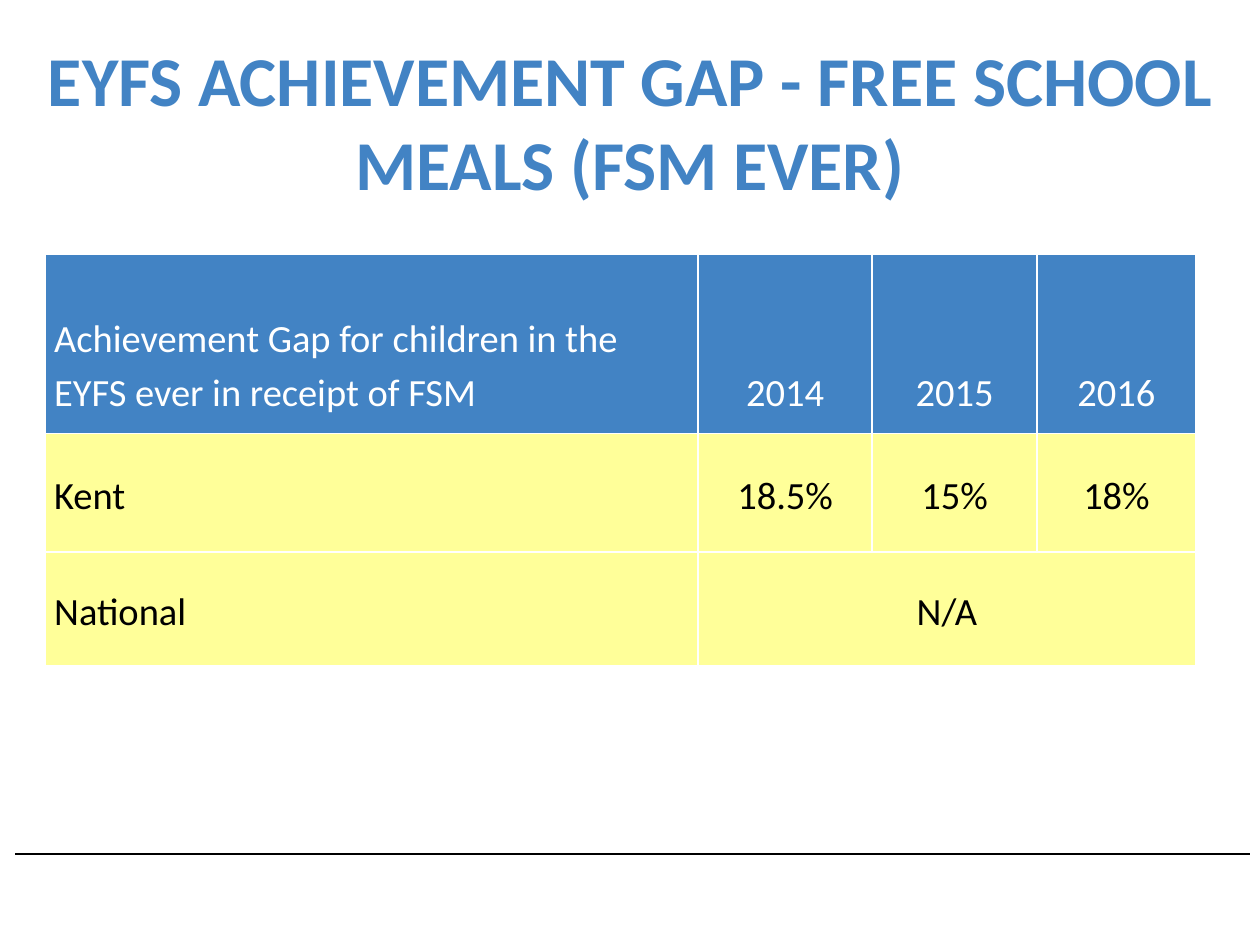
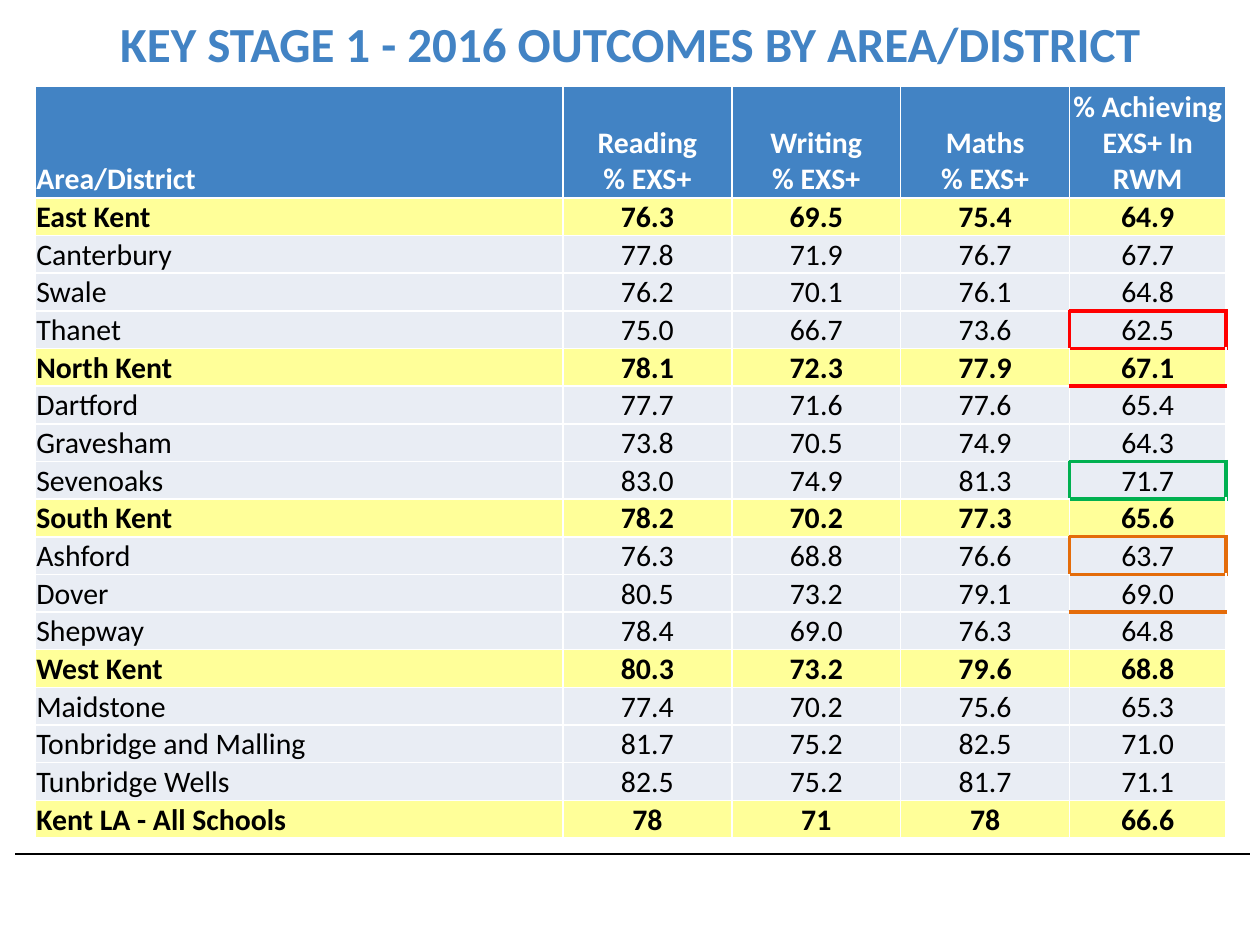
import pptx
import pptx.dml.color
import pptx.enum.shapes
import pptx.enum.text
import pptx.oxml
import pptx.oxml.ns
import pptx.util
from pptx.dml.color import RGBColor
from pptx.enum.text import MSO_ANCHOR, PP_ALIGN
from pptx.util import Pt

FONT = "Calibri"
BLUE = RGBColor(0x42, 0x83, 0xC4)
YELLOW = RGBColor(0xFF, 0xFF, 0x99)
PALE = RGBColor(0xE9, 0xED, 0xF4)
WHITE = RGBColor(0xFF, 0xFF, 0xFF)
BLACK = RGBColor(0, 0, 0)
RED = RGBColor(0xFF, 0, 0)
GREEN = RGBColor(0, 0xB0, 0x50)
ORANGE = RGBColor(0xE4, 0x6C, 0x0A)

TITLE_ONLY = 5
BORDER_SIDES = ["lnL", "lnR", "lnT", "lnB"]

GAP_ROWS = [
    ("Achievement Gap for children in the EYFS ever in receipt of FSM", "2014", "2015", "2016"),
    ("Kent", "18.5%", "15%", "18%"),
    ("National", "N/A", "", ""),
]

OUTCOME_HEADER = ("Area/District", "Reading\n% EXS+", "Writing\n% EXS+", "Maths\n% EXS+",
                  "% Achieving EXS+ In RWM")
OUTCOME_ROWS = [
    ("East Kent", "76.3", "69.5", "75.4", "64.9"),
    ("Canterbury", "77.8", "71.9", "76.7", "67.7"),
    ("Swale", "76.2", "70.1", "76.1", "64.8"),
    ("Thanet", "75.0", "66.7", "73.6", "62.5"),
    ("North Kent", "78.1", "72.3", "77.9", "67.1"),
    ("Dartford", "77.7", "71.6", "77.6", "65.4"),
    ("Gravesham", "73.8", "70.5", "74.9", "64.3"),
    ("Sevenoaks", "83.0", "74.9", "81.3", "71.7"),
    ("South Kent", "78.2", "70.2", "77.3", "65.6"),
    ("Ashford", "76.3", "68.8", "76.6", "63.7"),
    ("Dover", "80.5", "73.2", "79.1", "69.0"),
    ("Shepway", "78.4", "69.0", "76.3", "64.8"),
    ("West Kent", "80.3", "73.2", "79.6", "68.8"),
    ("Maidstone", "77.4", "70.2", "75.6", "65.3"),
    ("Tonbridge and Malling", "81.7", "75.2", "82.5", "71.0"),
    ("Tunbridge Wells", "82.5", "75.2", "81.7", "71.1"),
    ("Kent LA - All Schools", "78", "71", "78", "66.6"),
]
AREAS = {"East Kent", "North Kent", "South Kent", "West Kent", "Kent LA - All Schools"}
HIGHLIGHTS = {"Thanet": RED, "Sevenoaks": GREEN, "Ashford": ORANGE}


def format_runs(text_frame, size, color, bold):
    for paragraph in text_frame.paragraphs:
        for run in paragraph.runs:
            run.font.name = FONT
            run.font.size = Pt(size)
            run.font.bold = bold
            run.font.color.rgb = color


def add_titled_slide(presentation, title, top, height, size):
    slide = presentation.slides.add_slide(presentation.slide_layouts[TITLE_ONLY])
    shape = slide.shapes.title
    shape.left, shape.top = Pt(0), Pt(top)
    shape.width, shape.height = presentation.slide_width, Pt(height)
    text_frame = shape.text_frame
    text_frame.text = title
    text_frame.word_wrap = True
    text_frame.auto_size = pptx.enum.text.MSO_AUTO_SIZE.NONE
    text_frame.vertical_anchor = MSO_ANCHOR.MIDDLE
    text_frame.paragraphs[0].alignment = PP_ALIGN.CENTER
    format_runs(text_frame, size, BLUE, True)
    return slide


def add_footer_rule(presentation, slide):
    """Draw the rule and move it to the master, so that every slide shows it."""
    rule = slide.shapes.add_connector(pptx.enum.shapes.MSO_CONNECTOR.STRAIGHT,
                                      Pt(8.64), Pt(488), Pt(714.24), Pt(488))
    rule.line.color.rgb = BLACK
    rule.line.width = Pt(1)
    properties = rule.element.spPr
    properties.append(properties.makeelement(pptx.oxml.ns.qn("a:effectLst"), {}))
    presentation.slide_master.shapes.element.append(rule.element)


def add_plain_table(slide, left, top, widths, heights):
    """Add a table with thin white rules and no banding."""
    frame = slide.shapes.add_table(len(heights), len(widths), Pt(left), Pt(top),
                                   Pt(sum(widths)), Pt(sum(heights)))
    table = frame.table
    table.first_row = False
    table.horz_banding = False
    for column, width in zip(table.columns, widths):
        column.width = Pt(width)
    for row, height in zip(table.rows, heights):
        row.height = Pt(height)
    return table


def fill_row(table, row_index, texts, fill, color, size, bold=False,
             anchor=MSO_ANCHOR.BOTTOM, margins=(0, 0, 0, 0), line_spacing=None):
    """Write one row: first cell to the left, the others centred; margins go left, top, right, bottom."""
    for column_index, text in enumerate(texts):
        cell = table.cell(row_index, column_index)
        cell.fill.solid()
        cell.fill.fore_color.rgb = fill
        cell.vertical_anchor = anchor
        (cell.margin_left, cell.margin_top,
         cell.margin_right, cell.margin_bottom) = map(Pt, margins)
        cell.text_frame.text = text
        for paragraph in cell.text_frame.paragraphs:
            paragraph.alignment = PP_ALIGN.CENTER if column_index else PP_ALIGN.LEFT
            paragraph.line_spacing = line_spacing
        format_runs(cell.text_frame, size, color, bold)


def set_border(cell, side, color):
    properties = cell._tc.get_or_add_tcPr()
    border = pptx.oxml.parse_xml(
        f'<a:{side} {pptx.oxml.ns.nsdecls("a")} w="{Pt(2.25)}">'
        f'<a:solidFill><a:srgbClr val="{color}"/></a:solidFill></a:{side}>')
    earlier_sides = BORDER_SIDES[:BORDER_SIDES.index(side)]
    position = sum(properties.find(pptx.oxml.ns.qn(f"a:{name}")) is not None
                   for name in earlier_sides)
    properties.insert(position, border)


def highlight_cell(table, row, column, color):
    """Outline a cell, matching the edges it shares with its neighbours."""
    for side in BORDER_SIDES:
        set_border(table.cell(row, column), side, color)
    set_border(table.cell(row - 1, column), "lnB", color)
    set_border(table.cell(row + 1, column), "lnT", color)
    set_border(table.cell(row, column - 1), "lnR", color)


def add_gap_table(slide, left, top):
    table = add_plain_table(slide, left, top, [373, 99.4, 94.3, 90.7], [102.2, 67.7, 64.8])
    header, *body = GAP_ROWS
    fill_row(table, 0, header, BLUE, WHITE, 22, margins=(5, 0, 5, 9.6), line_spacing=1.15)
    for row_index, texts in enumerate(body, start=1):
        fill_row(table, row_index, texts, YELLOW, BLACK, 22, anchor=MSO_ANCHOR.MIDDLE,
                 margins=(5, 0, 5, 0), line_spacing=1.15)
    table.cell(2, 1).merge(table.cell(2, 3))


def add_outcomes_table(slide, left, top):
    table = add_plain_table(slide, left, top, [301.7] + [96.5] * 3 + [89.3],
                            [64.1] + [21.5] * len(OUTCOME_ROWS))
    margins = (0.72, 0.72, 0.72, 0)
    fill_row(table, 0, OUTCOME_HEADER, BLUE, WHITE, 17, bold=True, margins=margins)
    for row_index, texts in enumerate(OUTCOME_ROWS, start=1):
        is_area = texts[0] in AREAS
        fill_row(table, row_index, texts, YELLOW if is_area else PALE, BLACK, 17,
                 bold=is_area, margins=margins)
    for row_index, texts in enumerate(OUTCOME_ROWS, start=1):
        if texts[0] in HIGHLIGHTS:
            highlight_cell(table, row_index, len(texts) - 1, HIGHLIGHTS[texts[0]])


def main():
    presentation = pptx.Presentation()
    presentation.slide_width, presentation.slide_height = Pt(720), Pt(540)

    gap_slide = add_titled_slide(
        presentation, "EYFS ACHIEVEMENT GAP - FREE SCHOOL MEALS (FSM EVER)", 15, 108, 40)
    add_footer_rule(presentation, gap_slide)
    add_gap_table(gap_slide, 26, 145.5)

    outcomes_slide = add_titled_slide(
        presentation, "KEY STAGE 1 - 2016 OUTCOMES BY AREA/DISTRICT", 0, 49, 28)
    add_outcomes_table(outcomes_slide, 20, 49)

    presentation.save("out.pptx")


if __name__ == "__main__":
    main()
